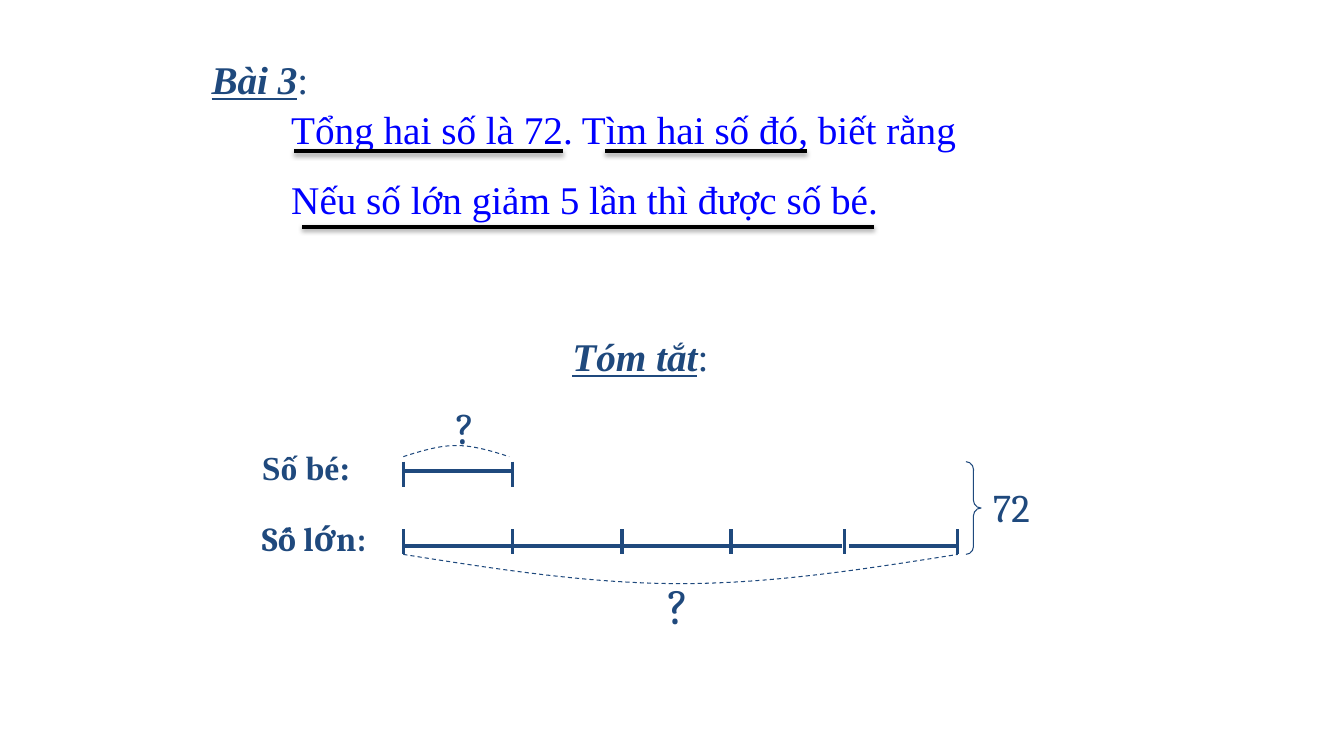
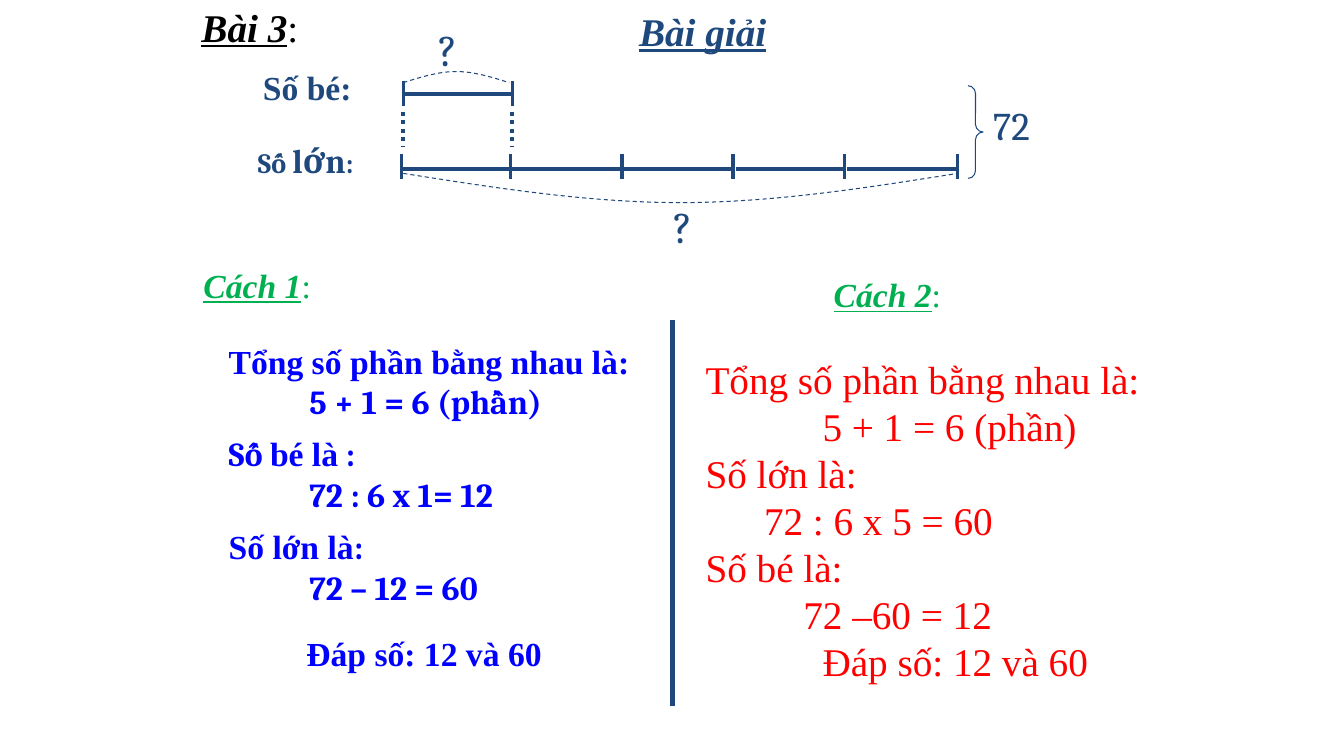
from lxml import etree
from pptx import Presentation
from pptx.dml.color import RGBColor
from pptx.enum.dml import MSO_LINE
from pptx.enum.shapes import MSO_CONNECTOR, MSO_SHAPE
from pptx.enum.text import MSO_ANCHOR
from pptx.oxml.ns import qn
from pptx.util import Inches, Pt

STRAIGHT = MSO_CONNECTOR.STRAIGHT
BRACE = MSO_SHAPE.RIGHT_BRACE
DASH, DOTS = MSO_LINE.DASH, MSO_LINE.ROUND_DOT
TOP, MIDDLE = MSO_ANCHOR.TOP, MSO_ANCHOR.MIDDLE
TIMES, CAMBRIA = "Times New Roman", "Cambria"
COLORS = {"navy": "1F497D", "blue": "0000FF", "red": "FF0000",
          "green": "00B050", "black": "000000"}

SEGMENT, TICK = 1.08, 0.25

PROBLEM = ["Tổng hai số là 72. Tìm hai số đó, biết rằng",
           "Nếu số lớn giảm 5 lần thì được số bé."]
UNDERLINES = [(2.92, 5.58, 1.5), (6, 8, 1.5), (3, 8.67, 2.25)]

PROBLEM_HEADINGS = [
    ((2, 0.5, 1.33, 0.57), "Bài 3", ":", 28, "navy"),
    ((5.58, 3.25, 2.5, 0.57), "Tóm tắt", ":", 28, "navy"),
]
SOLUTION_HEADINGS = [
    ((1.9, -0.02, 2, 0.57), "Bài 3", ":", 28, "black"),
    ((6.24, 0.02, 2.5, 0.57), "Bài giải", "", 28, "navy"),
    ((1.92, 2.58, 1.33, 0.5), "Cách 1", ":", 24, "green"),
    ((8.17, 2.67, 1.58, 0.5), "Cách 2", ":", 24, "green"),
]

PROBLEM_DIAGRAM = {
    "ticks": [4, 5.08, 6.17, 7.25, 8.38, 9.5],
    "segments": [4, 5.08, 6.17, 7.27, 8.42],
    "small": {"bar": 4.67, "tick": 4.58, "arc": 4.53},
    "large": {"bar": 5.42, "tick": 5.25, "arc": 5.5},
    "brace": (9.58, 4.58),
    "labels": [
        ((2.5, 4.38, 1.67, 0.67), [("Số bé:", TIMES, 24, True)]),
        ((2.5, 5.09, 1.83, 0.67), [("Số lớn:", CAMBRIA, 24, True)]),
        ((4.42, 3.92, 0.42, 0.5), [("?", CAMBRIA, 32, False)]),
        ((6.52, 5.65, 0.42, 0.67), [("?", CAMBRIA, 36, False)]),
        ((9.75, 4.75, 0.67, 0.67), [("72", CAMBRIA, 28, False)]),
    ],
}
SOLUTION_DIAGRAM = {
    "ticks": [3.98, 5.06, 6.17, 7.27, 8.38, 9.5],
    "segments": [3.98, 5.08, 6.19, 7.3, 8.4],
    "small": {"bar": 0.93, "tick": 0.8, "arc": 0.82},
    "large": {"bar": 1.68, "tick": 1.53, "arc": 1.72},
    "brace": (9.6, 0.85),
    "labels": [
        ((2.51, 0.61, 1.67, 0.67), [("Số bé:", TIMES, 24, True)]),
        ((2.46, 1.34, 1.83, 0.67), [("Số ", CAMBRIA, 20, True),
                                    ("lớn", CAMBRIA, 24, True),
                                    (":", CAMBRIA, 20, True)]),
        ((4.25, 0.17, 0.42, 0.5), [("?", CAMBRIA, 32, False)]),
        ((6.58, 1.92, 0.42, 0.5), [("?", CAMBRIA, 32, False)]),
        ((9.75, 0.96, 0.67, 0.67), [("72", CAMBRIA, 28, False)]),
    ],
}

FIRST_METHOD = [
    ([("Tổng số phần bằng nhau là:", TIMES)], "5 + 1 = 6 (phần)"),
    ([("Số ", CAMBRIA), ("bé là", TIMES), (" :", CAMBRIA)], "72 : 6 x 1= 12"),
    ([("Số lớn là", TIMES), (":", CAMBRIA)], "72 – 12 = 60"),
]
ANSWER = "Đáp số: 12 và 60"
SECOND_METHOD = [
    (0, "Tổng số phần bằng nhau là:"),
    (1.16, "5 + 1 = 6 (phần)"),
    (0, "Số lớn là:"),
    (0.58, "72 : 6 x 5 = 60"),
    (0, "Số bé là:"),
    (0.97, "72 –60 = 12"),
    (1.16, ANSWER),
]


def color(name):
    return RGBColor.from_string(COLORS[name])


def add_text(page, at, paragraphs, ink="navy", anchor=TOP, gap=0, pitch=None):
    box = page.shapes.add_textbox(*map(Inches, at))
    frame = box.text_frame
    frame.word_wrap = True
    frame.vertical_anchor = anchor
    for index, (indent, spans) in enumerate(paragraphs):
        para = frame.add_paragraph() if index else frame.paragraphs[0]
        if indent:
            properties = para._p.get_or_add_pPr()
            properties.set("marL", "0")
            properties.set("indent", str(Inches(indent)))
        if index and gap:
            para.space_before = Pt(gap)
        if pitch:
            para.line_spacing = Pt(pitch)
        for text, font, size, bold, *accent in spans:
            span = para.add_run()
            span.text = text
            span.font.name = font
            span.font.size = Pt(size)
            span.font.bold = bold
            span.font.color.rgb = color(ink)
            if accent:
                span.font.italic = span.font.underline = True


def add_headings(page, headings):
    for at, title, colon, size, ink in headings:
        spans = [(title, TIMES, size, True, "accent")]
        if colon:
            spans.append((colon, TIMES, size, False))
        add_text(page, at, [(0, spans)], ink)


def style_line(line, width, ink="navy", dash=None):
    line.color.rgb = color(ink)
    line.width = Pt(width)
    if dash:
        line.dash_style = dash


def add_line(page, start, end, width=3, ink="navy", dash=None, shadow=False):
    connector = page.shapes.add_connector(STRAIGHT, *map(Inches, start + end))
    style_line(connector.line, width, ink, dash)
    effects = etree.SubElement(connector._element.spPr, qn("a:effectLst"))
    if shadow:
        outer = etree.SubElement(effects, qn("a:outerShdw"), blurRad="40000",
                                 dist="23000", dir="5400000", rotWithShape="0")
        shade = etree.SubElement(outer, qn("a:srgbClr"), val=COLORS["black"])
        etree.SubElement(shade, qn("a:alpha"), val="35000")


def add_arc(page, left, right, base, rise, steps=40):
    points = []
    for step in range(steps + 1):
        part = step / steps
        climb = 1 - abs(2 * part - 1)
        points.append((Inches(left + (right - left) * part),
                       Inches(base + rise * (1.5 * climb - 0.5 * climb ** 3))))
    builder = page.shapes.build_freeform(*points[0], scale=1.0)
    builder.add_line_segments(points[1:], close=False)
    arc = builder.convert_to_shape()
    arc.shadow.inherit = False
    arc.fill.background()
    style_line(arc.line, 0.75, dash=DASH)


def add_diagram(page, diagram):
    small, large = diagram["small"], diagram["large"]
    rows = [(small, [4], [4, 4 + SEGMENT]),
            (large, diagram["segments"], diagram["ticks"])]
    for row, segments, ticks in rows:
        for x in segments:
            add_line(page, (x, row["bar"]), (x + SEGMENT, row["bar"]))
        for x in ticks:
            add_line(page, (x, row["tick"]), (x, row["tick"] + TICK), 2.25)
    add_arc(page, 4, 5.05, small["arc"], -0.11)
    add_arc(page, 4, 9.5, large["arc"], 0.29)
    brace = page.shapes.add_shape(BRACE, *map(Inches, diagram["brace"] + (0.15, 0.92)))
    brace.adjustments[0], brace.adjustments[1] = 0.51, 0.5
    brace.shadow.inherit = False
    brace.fill.background()
    style_line(brace.line, 0.75)
    for at, spans in diagram["labels"]:
        add_text(page, at, [(0, spans)])


def build_problem(page):
    add_headings(page, PROBLEM_HEADINGS)
    add_text(page, (2.17, 1, 8.92, 1.27),
             [(0.62, [(line, TIMES, 28, False)]) for line in PROBLEM], "blue", gap=16)
    for left, right, y in UNDERLINES:
        add_line(page, (left, y), (right, y), ink="black", shadow=True)
    add_diagram(page, PROBLEM_DIAGRAM)


def build_solution(page):
    add_headings(page, SOLUTION_HEADINGS)
    add_diagram(page, SOLUTION_DIAGRAM)
    for x in (4, 4 + SEGMENT):
        add_line(page, (x, 1.11), (x, 1.45), dash=DOTS)
    add_line(page, (6.67, 3.17), (6.67, 7))
    for index, (statement, sum_line) in enumerate(FIRST_METHOD):
        spans = [(text, font, 24, True) for text, font in statement]
        add_text(page, (2.17, 3.33 + 0.92 * index, 4.4, 0.91),
                 [(0, spans), (0.8, [(sum_line, CAMBRIA, 24, True)])], "blue")
    add_text(page, (2.94, 6.19, 2.66, 0.57),
             [(0, [(ANSWER, TIMES, 24, True)])], "blue", MIDDLE)
    add_text(page, (6.9, 3.46, 4.9, 3.4),
             [(indent, [(line, TIMES, 28, False)]) for indent, line in SECOND_METHOD],
             "red", MIDDLE, pitch=33.6)


def main():
    deck = Presentation()
    deck.slide_width, deck.slide_height = Inches(13.33), Inches(7.5)
    for build in (build_problem, build_solution):
        build(deck.slides.add_slide(deck.slide_layouts[6]))
    deck.save("out.pptx")


if __name__ == "__main__":
    main()
